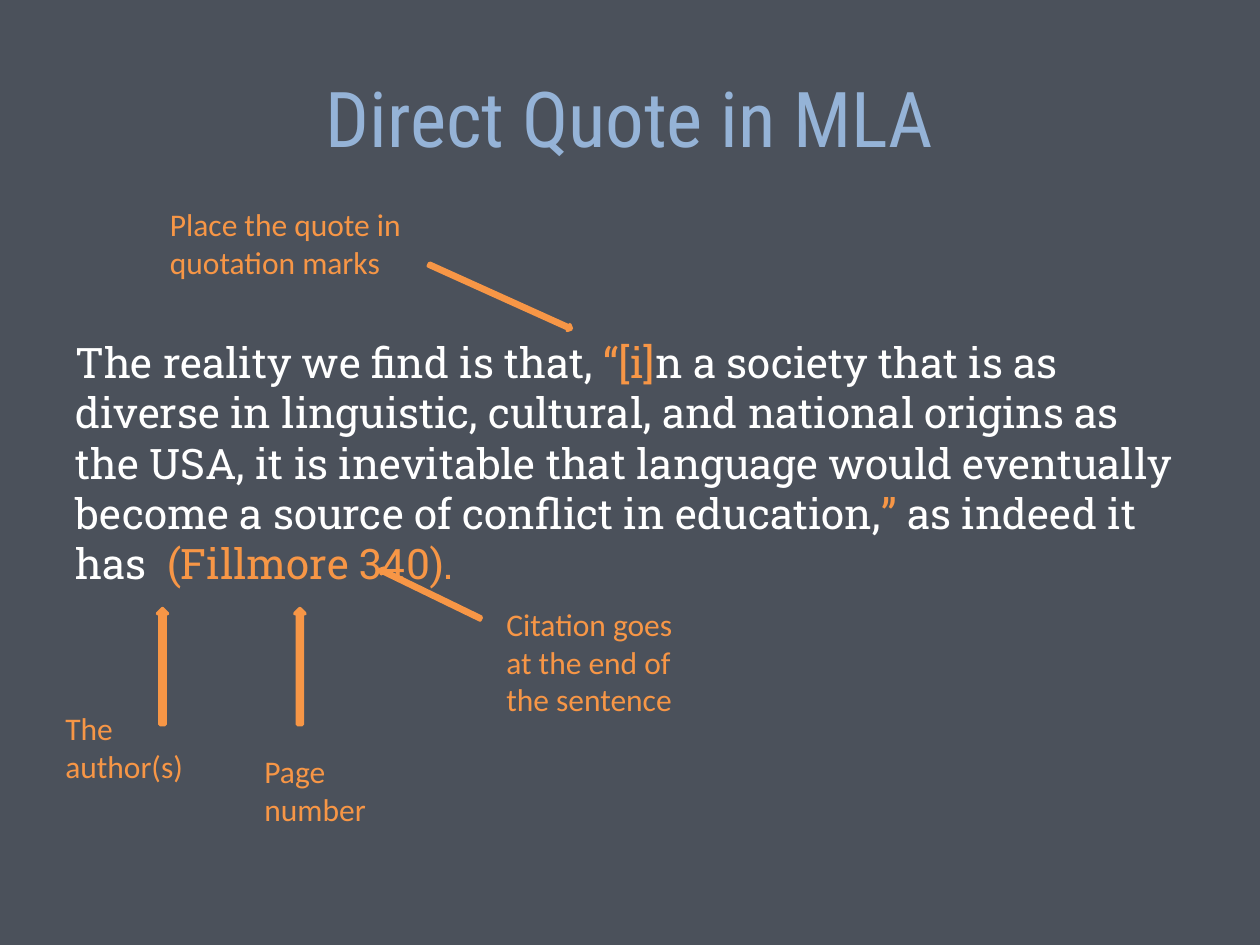
from pptx import Presentation
from pptx.dml.color import RGBColor
from pptx.enum.shapes import MSO_SHAPE
from pptx.enum.text import MSO_ANCHOR, PP_ALIGN
from pptx.util import Inches, Pt

SLATE = RGBColor(0x4B, 0x51, 0x5B)
BLUE = RGBColor(0x95, 0xB3, 0xD7)
ORANGE = RGBColor(0xF7, 0x96, 0x46)
WHITE = RGBColor(0xFF, 0xFF, 0xFF)


def add_text(paragraph, text, font="Calibri", size=18, color=ORANGE):
    run = paragraph.add_run()
    run.text = text
    run.font.name = font
    run.font.size = Pt(size)
    run.font.color.rgb = color


prs = Presentation()
prs.slide_width, prs.slide_height = Inches(10), Inches(7.5)
slide = prs.slides.add_slide(prs.slide_layouts[5])
slide.background.fill.solid()
slide.background.fill.fore_color.rgb = SLATE

# Title
title = slide.shapes.title
title.left, title.top = Inches(0.5), Inches(0.3)
title.width, title.height = Inches(9), Inches(1.25)
title.text_frame.vertical_anchor = MSO_ANCHOR.MIDDLE
heading = title.text_frame.paragraphs[0]
heading.alignment = PP_ALIGN.CENTER
add_text(heading, "Direct Quote in MLA", font="Roboto Condensed", size=44, color=BLUE)

# Sample sentence, with the parts of the citation in orange
sentence = slide.shapes.add_textbox(Inches(0.5), Inches(1.75), Inches(9), Inches(4.5)).text_frame
sentence.word_wrap = True
sentence.margin_top = Inches(0.92)
for words, color in [
    ("The reality we find is that, ", WHITE),
    ("“[i]", ORANGE),
    ("n a society that is as diverse in linguistic, cultural, and national origins as "
     "the USA, it is inevitable that language would eventually become a source of "
     "conflict in education,", WHITE),
    ("”", ORANGE),
    (" as indeed it has  ", WHITE),
    ("(Fillmore 340).", ORANGE),
]:
    add_text(sentence.paragraphs[0], words, font="Roboto Slab", size=24, color=color)

# Notes around the sentence
for words, left, top, width, height in [
    ("Place the quote in quotation marks", 1.25, 1.58, 2.08, 0.71),
    ("Citation goes at the end of the sentence", 3.92, 4.75, 1.75, 1.01),
    ("The author(s)", 0.42, 5.58, 1.5, 0.71),
    ("Page number", 2, 5.92, 1.42, 0.71),
]:
    note = slide.shapes.add_textbox(
        Inches(left), Inches(top), Inches(width), Inches(height)).text_frame
    note.word_wrap = True
    add_text(note.paragraphs[0], words)

# Arrows from the notes to the sentence
for left, top, width, height, angle in [
    (3.35, 2.33, 1.24, 0.05, 24.3),
    (2.97, 4.69, 0.89, 0.05, 205.9),
    (0.83, 5.25, 0.92, 0.08, 270),
    (1.92, 5.25, 0.92, 0.08, 270),
]:
    arrow = slide.shapes.add_shape(
        MSO_SHAPE.RIGHT_ARROW, Inches(left), Inches(top), Inches(width), Inches(height))
    arrow.rotation = angle
    arrow.shadow.inherit = False
    arrow.fill.solid()
    arrow.fill.fore_color.rgb = ORANGE
    arrow.line.color.rgb = ORANGE
    arrow.line.width = Pt(2)

prs.save("out.pptx")
